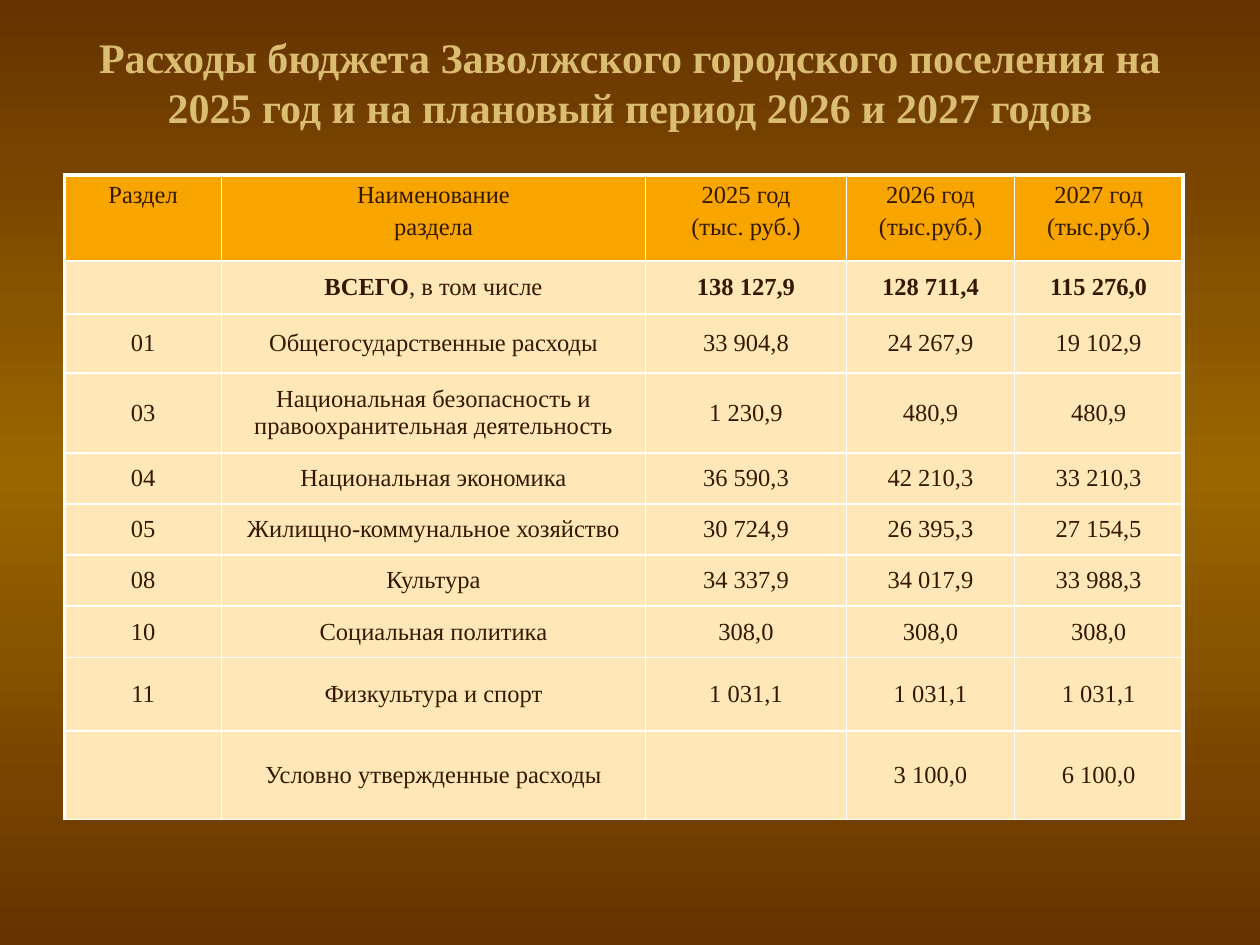
"""Build the slide with the budget expenditure table by section."""
from copy import deepcopy

from lxml import etree
from pptx import Presentation
from pptx import util as u
from pptx.dml.color import RGBColor
from pptx.enum import text
from pptx.oxml import ns

COLOURS = {
    "edge": "663300", "middle": "996600", "title": "DBBD71",
    "ink": "331900", "header": "F8A500", "body": "FFE7B8", "border": "FFFFFF",
}
TITLE_FORMAT = {"name": "Times New Roman", "size": u.Pt(24), "bold": True}
CELL_FORMAT = {"name": "Times New Roman", "size": u.Pt(14), "bold": False}
COLUMN_WIDTHS = [3.17, 8.54, 4.06, 3.38, 3.4]
ROW_HEIGHTS = [1.73, 1.07, 1.19, 1.61, 1.03, 1.03, 1.03, 1.03, 1.49, 1.78]
EXPENSES = [
    ["Раздел", "Наименование\nраздела", "2025 год\n(тыс. руб.)",
     "2026 год\n(тыс.руб.)", "2027 год\n(тыс.руб.)"],
    ["", "ВСЕГО|, в том числе", "138 127,9", "128 711,4", "115 276,0"],
    ["01", "Общегосударственные расходы", "33 904,8", "24 267,9", "19 102,9"],
    ["03", "Национальная безопасность и правоохранительная деятельность",
     "1 230,9", "480,9", "480,9"],
    ["04", "Национальная экономика", "36 590,3", "42 210,3", "33 210,3"],
    ["05", "Жилищно-коммунальное хозяйство", "30 724,9", "26 395,3", "27 154,5"],
    ["08", "Культура", "34 337,9", "34 017,9", "33 988,3"],
    ["10", "Социальная политика", "308,0", "308,0", "308,0"],
    ["11", "Физкультура и спорт", "1 031,1", "1 031,1", "1 031,1"],
    ["", "Условно утвержденные расходы", "", "3 100,0", "6 100,0"],
]


def add_words(paragraph, words, font_format, colour):
    paragraph.alignment = text.PP_ALIGN.CENTER
    run = paragraph.add_run()
    run.text = words
    for attribute, value in font_format.items():
        setattr(run.font, attribute, value)
    run.font.color.rgb = RGBColor.from_string(COLOURS[colour])


def add_border(cell, side, points):
    line = etree.SubElement(cell._tc.get_or_add_tcPr(), ns.qn(f"a:{side}"), w=str(u.Pt(points)))
    fill = etree.SubElement(line, ns.qn("a:solidFill"))
    etree.SubElement(fill, ns.qn("a:srgbClr"), val=COLOURS["border"])


deck = Presentation()
deck.slide_width, deck.slide_height = u.Cm(25.4), u.Cm(19.05)
slide = deck.slides.add_slide(deck.slide_layouts[5])

backdrop = slide.background.fill
backdrop.gradient()
backdrop.gradient_angle = 90
stops = slide.element.find(f".//{ns.qn('a:gsLst')}")
stops.insert(1, deepcopy(stops[0]))
for stop, place, colour in zip(backdrop.gradient_stops, (0, 0.5, 1), ("edge", "middle", "edge")):
    stop.position = place
    stop.color.rgb = RGBColor.from_string(COLOURS[colour])

heading = slide.shapes.title
heading.left, heading.top, heading.width, heading.height = (
    u.Cm(size) for size in (1.27, 0.95, 22.86, 1.4))
heading.text_frame.auto_size = text.MSO_AUTO_SIZE.NONE
heading.text_frame.vertical_anchor = text.MSO_ANCHOR.MIDDLE
add_words(heading.text_frame.paragraphs[0],
          "Расходы бюджета Заволжского городского поселения на 2025 год "
          "и на плановый период 2026 и 2027 годов", TITLE_FORMAT, "title")

budget = slide.shapes.add_table(
    len(ROW_HEIGHTS), len(COLUMN_WIDTHS), u.Cm(1.3), u.Cm(3.53),
    u.Cm(sum(COLUMN_WIDTHS)), u.Cm(sum(ROW_HEIGHTS))).table
for column, width in zip(budget.columns, COLUMN_WIDTHS):
    column.width = u.Cm(width)
for row, height in zip(budget.rows, ROW_HEIGHTS):
    row.height = u.Cm(height)

last_column = len(COLUMN_WIDTHS) - 1
for row_number, section in enumerate(EXPENSES):
    for column_number, entry in enumerate(section):
        cell = budget.cell(row_number, column_number)
        is_header = row_number == 0
        cell.vertical_anchor = text.MSO_ANCHOR.TOP if is_header else text.MSO_ANCHOR.MIDDLE
        for side, is_outer in {
            "lnL": column_number == 0, "lnR": column_number == last_column,
            "lnT": is_header, "lnB": False,
        }.items():
            add_border(cell, side, 2.25 if is_outer else 1)
        cell.fill.solid()
        cell.fill.fore_color.rgb = RGBColor.from_string(COLOURS["header" if is_header else "body"])
        for line_number, line in enumerate(entry.split("\n") if entry else []):
            frame = cell.text_frame
            paragraph = frame.add_paragraph() if line_number else frame.paragraphs[0]
            if is_header or column_number < last_column:
                paragraph.space_before = u.Pt(2.8)
            for part_number, part in enumerate(line.split("|")):
                is_total = row_number == 1 and part_number == 0
                add_words(paragraph, part, CELL_FORMAT | {"bold": is_total}, "ink")

deck.save("out.pptx")
